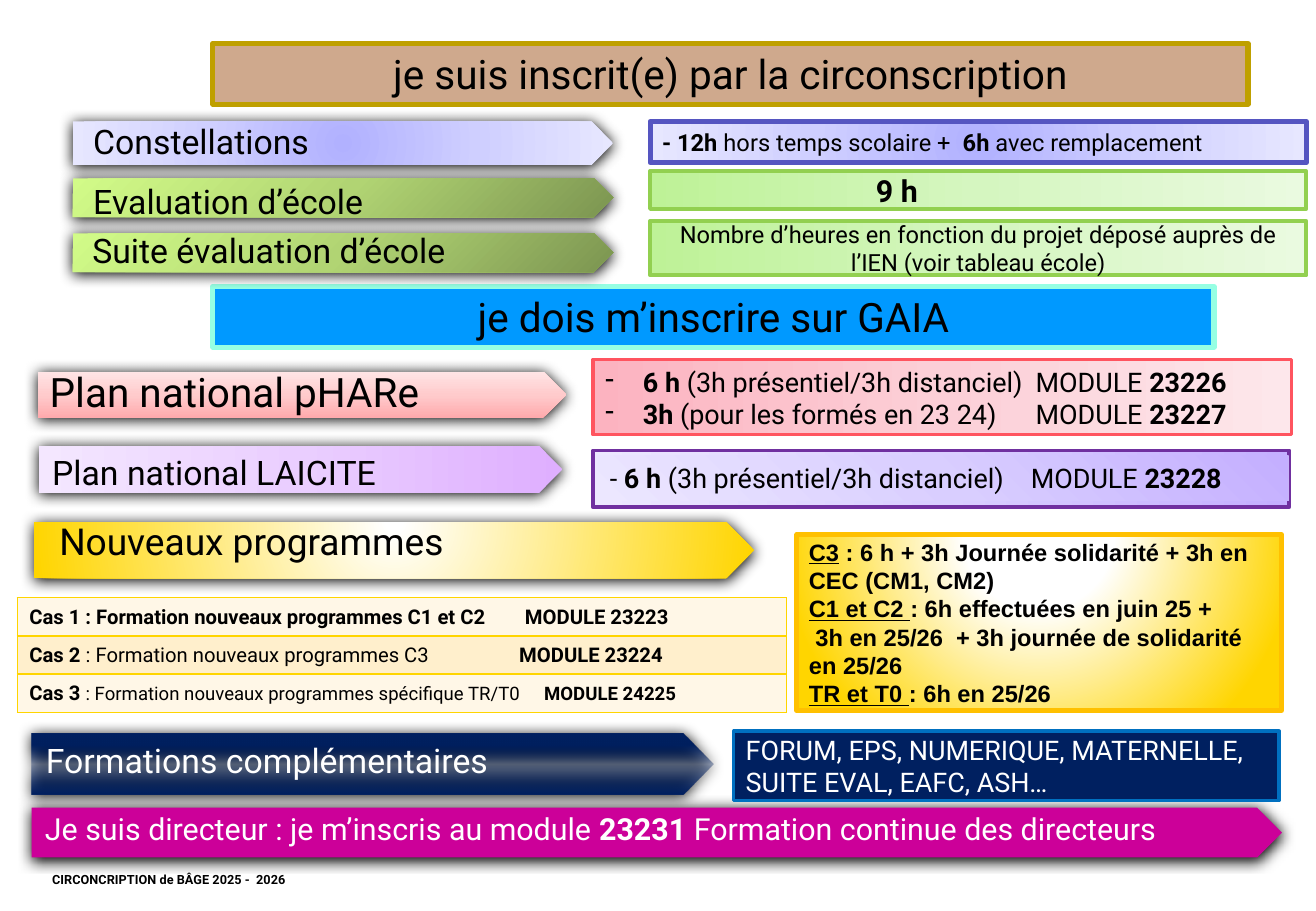
from lxml import etree
from pptx import Presentation
from pptx import util as u
from pptx.dml.color import RGBColor
from pptx.enum import shapes, text
from pptx.oxml.ns import qn

COLOURS = {
    "black": "000000", "white": "FFFFFF", "magenta": "CC0099", "navy": "002060",
    "sky": "0099FF", "aqua": "96FFE3", "tan": "CFA98D", "olive": "BFA000",
    "lilac": "C4AFFF", "lilac mid": "D9CEFF", "lilac pale": "ECE7FF", "purple": "7030A0",
    "violet": "DFAFFF", "violet mid": "EACEFF", "violet pale": "F4E7FF",
    "blue": "B1B1FF", "blue mid": "CFCFFF", "blue pale": "E7E7FF", "indigo": "5555C1",
    "rose": "FFAAAD", "rose mid": "FFCBCC", "rose pale": "FFE5E6",
    "pink": "FCB3C0", "pink mid": "FCCFD7", "pink pale": "FDE7EB", "red": "FF545F",
    "moss": "7C9551", "moss mid": "B1D473", "moss pale": "D2FB88",
    "mint": "BEF297", "mint mid": "D5F6C0", "mint pale": "EAFAE0", "green": "92D050",
    "yellow": "FFD500", "amber": "FFC000", "cobalt": "0070C0",
    "cream": "FFF7E7", "sand": "FFEFCC",
}
CENTRE, TOP_MIDDLE = (50, 50, 50, 50), (50, -80, 50, 180)
MIDDLE = text.MSO_ANCHOR.MIDDLE


def rgb(name):
    return RGBColor.from_string(COLOURS[name])


def child(parent, tag, **attributes):
    return etree.SubElement(parent, qn(tag), {key: str(value) for key, value in attributes.items()})


def shades(name, angle=None, focus=None):
    stops = [(0, name, 100), (50, name + " mid", 100), (100, name + " pale", 100)]
    return {"stops": stops, "angle": angle, "focus": focus}


class Board:
    """Draws the training overview on one slide in a shared style."""

    def __init__(self, deck):
        self.page = deck.slides.add_slide(deck.slide_layouts[6])
        self.font = "Roboto"

    def paint(self, shape, fill):
        if isinstance(fill, str):
            shape.fill.solid()
            shape.fill.fore_color.rgb = rgb(fill)
            return
        shape.fill.gradient()
        gradient = shape._element.spPr.find(qn("a:gradFill"))
        for part in list(gradient):
            gradient.remove(part)
        stop_list = child(gradient, "a:gsLst")
        for position, name, alpha in fill["stops"]:
            stop = child(stop_list, "a:gs", pos=position * 1000)
            colour = child(stop, "a:srgbClr", val=COLOURS[name])
            if alpha < 100:
                child(colour, "a:alpha", val=alpha * 1000)
        if fill["focus"]:
            route = child(gradient, "a:path", path="circle")
            sides = {side: edge * 1000 for side, edge in zip("ltrb", fill["focus"])}
            child(route, "a:fillToRect", **sides)
        else:
            child(gradient, "a:lin", ang=fill["angle"] * 60000, scaled=0)

    def shape(self, kind, place, fill):
        shape = self.page.shapes.add_shape(kind, *map(u.Cm, place))
        shape.shadow.inherit = False
        shape.line.fill.background()
        self.paint(shape, fill)
        return shape

    def arrow(self, place, fill):
        shape = self.shape(shapes.MSO_SHAPE.PENTAGON, place, fill)
        effects = shape._element.spPr.find(qn("a:effectLst"))
        shadow = child(effects, "a:outerShdw", blurRad=u.Pt(8.5), dist=u.Pt(1),
                       dir=5400000, algn="ctr", rotWithShape=0)
        child(shadow, "a:srgbClr", val=COLOURS["black"])

    def panel(self, place, fill, line=None, width=3, words=None, **style):
        shape = self.shape(shapes.MSO_SHAPE.RECTANGLE, place, fill)
        if line:
            shape.line.color.rgb = rgb(line)
            shape.line.width = u.Pt(width)
        if words:
            self.compose(shape.text_frame, words, **style)

    def label(self, place, words, size, margin=None, **style):
        box = self.page.shapes.add_textbox(*map(u.Cm, place))
        frame = box.text_frame
        if margin is not None:
            frame.margin_left = frame.margin_right = u.Cm(margin)
            frame.margin_top = frame.margin_bottom = u.Cm(margin)
        self.compose(frame, words, size, **style)

    def compose(self, frame, words, size, colour="black", bold=False, underline=False,
                font=None, align=text.PP_ALIGN.LEFT, anchor=text.MSO_ANCHOR.TOP,
                tab=None, bullet=None):
        frame.word_wrap = True
        frame.vertical_anchor = anchor
        for index, line in enumerate(words.split("\n")):
            para = frame.paragraphs[0] if index == 0 else frame.add_paragraph()
            para.alignment = align
            properties = para._p.get_or_add_pPr()
            if bullet:
                properties.set("marL", str(u.Cm(0.79)))
                properties.set("indent", str(-u.Cm(0.79)))
                child(properties, "a:buChar", char=bullet)
            if tab:
                child(child(properties, "a:tabLst"), "a:tab", pos=u.Cm(tab), algn="l")
            for order, piece in enumerate(line.split("*")):
                if not piece:
                    continue
                marked = order % 2 == 1
                span = para.add_run()
                span.text = piece
                span.font.name = font or self.font
                span.font.size = u.Pt(size)
                span.font.color.rgb = rgb(colour)
                span.font.bold = bold or marked
                span.font.underline = underline and marked

    def table(self, place, rows, border):
        table = self.page.shapes.add_table(len(rows), 1, *map(u.Cm, place)).table
        table.first_row = table.horz_banding = False
        for index, (words, size, tab, fill) in enumerate(rows):
            cell = table.cell(index, 0)
            self.compose(cell.text_frame, words, size, tab=tab)
            para = cell.text_frame.paragraphs[0]
            para.line_spacing = 1.07
            para.runs[0].font.size = u.Pt(12)
            cell.vertical_anchor = MIDDLE
            properties = cell._tc.get_or_add_tcPr()
            for side in ("a:lnL", "a:lnR", "a:lnT", "a:lnB"):
                edge = child(properties, side, w=u.Pt(1))
                child(child(edge, "a:solidFill"), "a:srgbClr", val=COLOURS[border])
            cell.fill.solid()
            cell.fill.fore_color.rgb = rgb(fill)


def main():
    deck = Presentation()
    deck.slide_width, deck.slide_height = u.Cm(27.51), u.Cm(19.05)
    board = Board(deck)
    centre = text.PP_ALIGN.CENTER

    board.panel((4.45, 0.91, 21.64, 1.27), "tan", "olive", size=24, align=centre,
                words="je suis inscrit(e) par la circonscription")
    board.panel((4.45, 5.99, 20.93, 1.27), "sky", "aqua", size=24, align=centre,
                words="je dois m’inscrire sur GAIA")

    moss = shades("moss", focus=(100, 100, 0, 0))
    glow = {"stops": [(0, "white", 100), (2, "white", 100), (100, "yellow", 100)],
            "focus": TOP_MIDDLE}
    wide_glow = {"stops": [(0, "white", 100), (29, "white", 100), (100, "yellow", 100)],
                 "focus": TOP_MIDDLE}
    sheen = {"stops": [(2, "navy", 100), (50, "navy", 35), (81, "navy", 100),
                       (100, "navy", 100)], "angle": 270, "focus": None}
    arrows = [
        ((1.52, 2.54, 11.3, 0.91), shades("blue", focus=CENTRE),
         (1.7, 2.41, 9.8, 1.12), "Constellations", 20, "black"),
        ((1.52, 3.73, 11.3, 0.81), moss,
         (1.7, 3.66, 10.41, 1.12), "Evaluation d’école", 20, "black"),
        ((1.52, 4.88, 11.3, 0.81), moss,
         (1.68, 4.67, 10.41, 1.12), "Suite évaluation d’école", 20, "black"),
        ((0.79, 7.77, 11.05, 0.97), shades("rose", 270),
         (0.79, 7.54, 10.16, 1.27), "Plan national pHARe", 24, "black"),
        ((0.81, 9.32, 10.95, 0.99), shades("violet", 180),
         (0.84, 9.32, 8.48, 1.12), "Plan national LAICITE", 20, "black"),
        ((0.71, 10.92, 15.06, 1.17), glow,
         (0.99, 10.72, 13.18, 1.19), "Nouveaux programmes", 22, "black"),
        ((0.66, 15.34, 14.25, 1.27), sheen,
         (0.71, 15.34, 14.4, 1.12), "Formations complémentaires", 20, "white"),
        ((0.66, 16.89, 26.14, 1.04), "magenta", (0.69, 16.81, 26.8, 1.02),
         "Je suis directeur : je m’inscris au module *23231 *Formation continue des directeurs",
         18, "white"),
    ]
    for place, fill, label_place, words, size, colour in arrows:
        board.arrow(place, fill)
        board.label(label_place, words, size, colour=colour)

    board.panel((13.59, 2.54, 13.72, 0.86), shades("blue", focus=CENTRE), "indigo", size=14,
                words="*- 12h *hors temps scolaire + * 6h* avec remplacement")
    board.panel((13.59, 3.58, 13.72, 0.79), shades("mint", 0), "green", 2.25)
    board.label((18.06, 3.48, 4.55, 1.02), "9 h", 18, bold=True)
    board.panel((13.59, 4.62, 13.72, 1.14), shades("mint", 0), "green", 2.25, size=14,
                align=centre, anchor=MIDDLE,
                words="Nombre d’heures en fonction du projet déposé auprès de l’IEN "
                      "(voir tableau école)")
    board.panel((12.4, 7.52, 14.6, 1.57), shades("pink", 0), "red", 2.25)
    board.label((12.4, 7.52, 14.91, 1.63),
                "*6 h *(3h présentiel/3h distanciel)\tMODULE *23226*\n"
                "*3h* (pour les formés en 23 24)\tMODULE *23227*", 16, tab=9, bullet="-")
    board.panel((12.4, 9.42, 14.55, 1.19), shades("lilac", 180), "purple", 2.25)
    board.panel((12.5, 9.53, 14.43, 0.94), shades("lilac", focus=(100, 0, 0, 100)), size=16,
                words="- *6 h *(3h présentiel/3h distanciel)\tMODULE *23228*", tab=8.8)
    board.panel((16.66, 11.18, 10.13, 3.68), wide_glow, "amber", size=14, font="Arial",
                bold=True, underline=True, anchor=MIDDLE,
                words="*C3* : 6 h + 3h Journée solidarité + 3h en CEC (CM1, CM2)\n"
                      "*C1 et C2 *: 6h effectuées en juin 25 +\n"
                      " 3h en 25/26  + 3h journée de solidarité en 25/26\n"
                      "*TR et T0 *: 6h en 25/26")
    board.panel((15.34, 15.29, 11.4, 1.45), "navy", "cobalt", 2, size=16, colour="white",
                anchor=MIDDLE, words="FORUM, EPS, NUMERIQUE, MATERNELLE, SUITE EVAL, EAFC, ASH…")

    board.table((0.36, 12.5, 16.08, 2.37), [
        ("*Cas 1 : Formation nouveaux programmes C1 et C2\tMODULE 23223*", 12, 10.36, "cream"),
        ("*Cas 2 *: Formation nouveaux programmes C3\t*MODULE 23224*", 12, 10.24, "sand"),
        ("*Cas 3 *: Formation nouveaux programmes spécifique TR/T0\t*MODULE 24225*",
         11, 10.76, "cream"),
    ], "yellow")
    board.label((1.09, 17.73, 17.75, 1.32), "CIRCONCRIPTION de BÂGE 2025 -  2026", 7.5,
                margin=0, bold=True, anchor=MIDDLE)
    deck.save("out.pptx")


if __name__ == "__main__":
    main()
